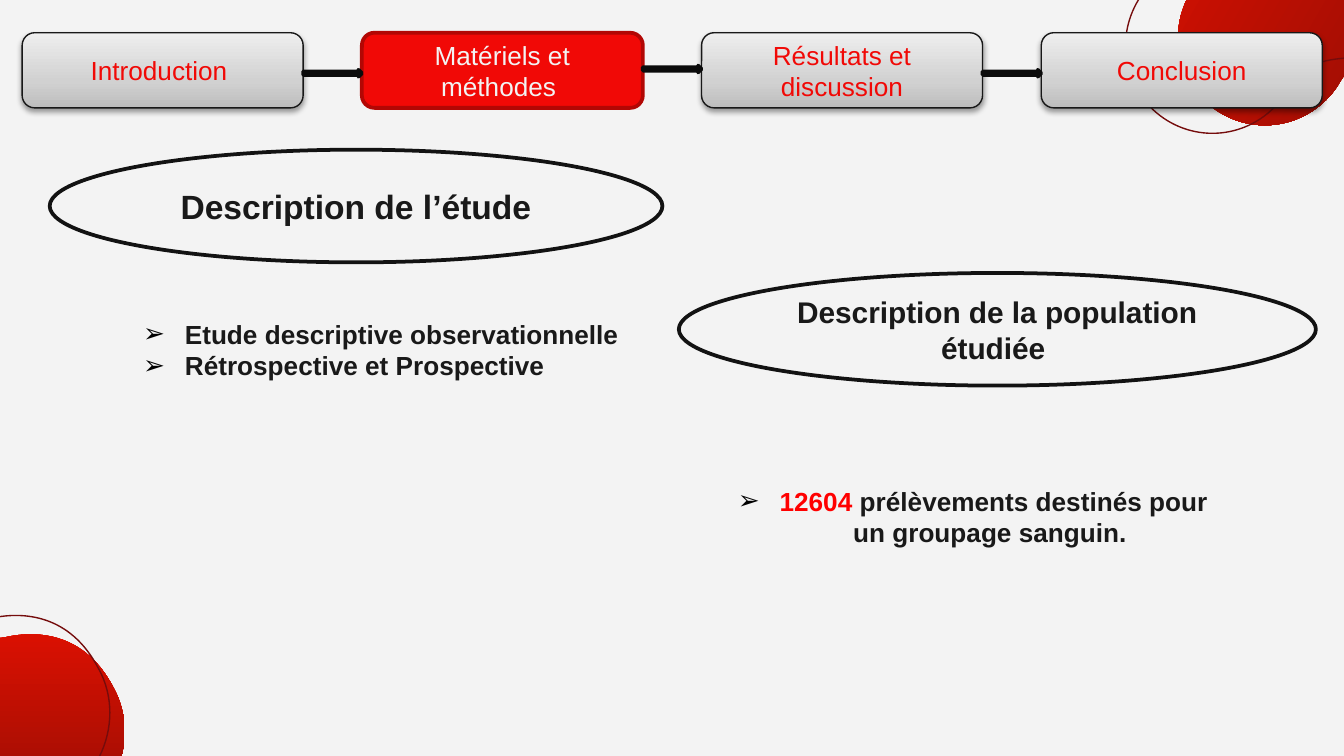
from copy import deepcopy
from math import cos, radians, sin

from lxml.etree import SubElement
from pptx import Presentation
from pptx.dml.color import RGBColor
from pptx.enum.shapes import MSO_SHAPE as Shape
from pptx.enum.text import MSO_ANCHOR as Anchor, MSO_AUTO_SIZE as AutoSize, PP_ALIGN as Align
from pptx.oxml.ns import qn
from pptx.util import Cm, Pt

FONT = "Arial"
PALE = RGBColor(0xF3, 0xF3, 0xF3)
INK = RGBColor(0x19, 0x19, 0x19)
STEP_LINE = RGBColor(0x18, 0x18, 0x18)
OUTLINE = RGBColor(0x12, 0x12, 0x12)
ARROW_LINE = RGBColor(0x0B, 0x0B, 0x0B)
RED = RGBColor(0xF1, 0x09, 0x06)
DARK_RED = RGBColor(0xB2, 0x07, 0x04)
NUMBER_RED = RGBColor(0xFF, 0x00, 0x00)
BLOB_LINE = RGBColor(0x75, 0x0C, 0x0C)
BLOB_STOPS = [(0, RGBColor(0xE9, 0x11, 0x01)), (1, RGBColor(0x63, 0x0B, 0x05))]
GREY_STOPS = [(0, RGBColor(0xBD, 0xBD, 0xBD)), (0.35, RGBColor(0xD1, 0xD1, 0xD1)),
              (1, RGBColor(0xEE, 0xEE, 0xEE))]

STEPS = ["Introduction ", "Matériels et méthodes ", "Résultats et discussion", "Conclusion"]
ACTIVE_STEP = 1
STEP_LEFT, STEP_TOP, STEP_WIDTH, STEP_HEIGHT, STEP_PITCH = 0.42, 0.62, 5.31, 1.42, 6.42

# Bézier points in inches: a start, then two controls and an end per curve.
TOP_BLOB = [
    (9.19, -0.33), (9.11, -0.31), (9.04, -0.26), (8.98, -0.21),
    (8.72, 0.02), (8.69, 0.42), (8.9, 0.68), (9.13, 0.97), (9.54, 1.01), (9.82, 0.78),
    (9.88, 0.73), (9.93, 0.67), (9.97, 0.6), (10.04, 0.48), (10.16, 0.4), (10.3, 0.38),
    (10.54, 0.34), (10.76, 0.38), (10.96, 0.48), (11.03, 0.52), (11.12, 0.54), (11.21, 0.55),
    (11.49, 0.55), (11.74, 0.33), (11.77, 0.05), (11.8, -0.27), (11.56, -0.54), (11.25, -0.56),
    (11.07, -0.57), (10.92, -0.66), (10.82, -0.8), (10.69, -1), (10.47, -1.13), (10.22, -1.14),
    (9.74, -1.16), (9.55, -0.85), (9.47, -0.61), (9.43, -0.48), (9.32, -0.38), (9.19, -0.33),
]
TOP_CENTER = (10.24, 0.16)
BOTTOM_BLOB = [
    (-0.31, 4.64), (-0.37, 4.59), (-0.44, 4.55), (-0.52, 4.53),
    (-0.83, 4.42), (-1.17, 4.59), (-1.29, 4.89), (-1.41, 5.21), (-1.25, 5.57), (-0.93, 5.69),
    (-0.86, 5.72), (-0.79, 5.73), (-0.71, 5.73), (-0.58, 5.73), (-0.46, 5.79), (-0.38, 5.9),
    (-0.23, 6.08), (-0.15, 6.28), (-0.14, 6.49), (-0.14, 6.58), (-0.12, 6.66), (-0.08, 6.73),
    (0.06, 6.97), (0.35, 7.07), (0.6, 6.95), (0.88, 6.83), (0.99, 6.5), (0.86, 6.23),
    (0.78, 6.09), (0.78, 5.92), (0.85, 5.77), (0.95, 5.57), (0.96, 5.32), (0.84, 5.11),
    (0.63, 4.71), (0.28, 4.69), (0.05, 4.74), (-0.08, 4.77), (-0.21, 4.73), (-0.31, 4.64),
]


def set_gradient(shape, stops, angle):
    shape.fill.gradient()
    shape.fill.gradient_angle = angle
    stop_list = shape._element.spPr.find(qn("a:gradFill")).find(qn("a:gsLst"))
    for _ in stops[2:]:
        stop_list.append(deepcopy(stop_list[0]))
    for stop, (position, color) in zip(shape.fill.gradient_stops, stops):
        stop.position = position
        stop.color.rgb = color


def set_line(shape, color, width):
    shape.line.color.rgb = color
    shape.line.width = Pt(width)


def add_soft_shadow(shape):
    effects = shape._element.spPr.find(qn("a:effectLst"))
    shadow = SubElement(effects, qn("a:outerShdw"), blurRad=str(Pt(3.1)), dist=str(Pt(1.6)),
                        dir="5400000", rotWithShape="0")
    color = SubElement(shadow, qn("a:srgbClr"), val="000000")
    SubElement(color, qn("a:alpha"), val="38000")


def turn(points, center, degrees):
    """Return the points turned clockwise about the center."""
    c, s = cos(radians(degrees)), sin(radians(degrees))
    offsets = [(x - center[0], y - center[1]) for x, y in points]
    return [(center[0] + c * x - s * y, center[1] + s * x + c * y) for x, y in offsets]


def make_curved(freeform):
    """Turn each three line segments into one cubic Bézier curve."""
    lines = list(freeform._element.spPr.iter(qn("a:lnTo")))
    for first, second, third in zip(lines[::3], lines[1::3], lines[2::3]):
        first.tag = qn("a:cubicBezTo")
        for line in (second, third):
            first.append(line[0])
            line.getparent().remove(line)


def add_blob(slide, points, rotation, shift=(0, 0)):
    outline = [(Cm(2.54 * (x + shift[0])), Cm(2.54 * (y + shift[1]))) for x, y in points]
    builder = slide.shapes.build_freeform(*outline[0])
    builder.add_line_segments(outline[1:])
    blob = builder.convert_to_shape()
    make_curved(blob)
    blob.rotation = rotation
    blob.shadow.inherit = False
    return blob


def add_blob_pair(slide, points, rotation, shift):
    """Add a filled blob and its shifted thin outline."""
    blob = add_blob(slide, points, rotation)
    set_gradient(blob, BLOB_STOPS, 270)
    blob.line.fill.background()
    ring = add_blob(slide, points, rotation, shift)
    ring.fill.background()
    set_line(ring, BLOB_LINE, 0.75)


def add_preset(slide, kind, left, top, width, height):
    shape = slide.shapes.add_shape(kind, Cm(left), Cm(top), Cm(width), Cm(height))
    shape.shadow.inherit = False
    return shape


def set_font(font, size, color, bold):
    font.name = FONT
    font.size = Pt(size)
    font.bold = bold
    font.color.rgb = color


def set_label(shape, text, size, color, bold=False):
    frame = shape.text_frame
    frame.word_wrap = True
    frame.vertical_anchor = Anchor.MIDDLE
    para = frame.paragraphs[0]
    para.text = text
    para.alignment = Align.CENTER
    set_font(para.font, size, color, bold)


def add_heading(slide, text, size, left, top, width):
    oval = add_preset(slide, Shape.OVAL, left, top, width, 2.13)
    oval.fill.background()
    set_line(oval, OUTLINE, 2)
    set_label(oval, text, size, INK, bold=True)


def add_bullet(para):
    props = para._p.get_or_add_pPr()
    props.set("marL", str(Cm(0.79)))
    props.set("indent", str(Cm(-0.79)))
    color = SubElement(props, qn("a:buClr"))
    SubElement(color, qn("a:srgbClr"), val="000000")
    SubElement(props, qn("a:buFont"), typeface=FONT)
    SubElement(props, qn("a:buChar"), char="➢")


def fill_list(body, left, top, height, items, alignment):
    """Place the body and write items, each a list of (text, color) spans."""
    body.left, body.top, body.width, body.height = Cm(left), Cm(top), Cm(9.53), Cm(height)
    frame = body.text_frame
    frame.auto_size = AutoSize.NONE
    frame.vertical_anchor = Anchor.MIDDLE
    for i, spans in enumerate(items):
        para = frame.add_paragraph() if i else frame.paragraphs[0]
        add_bullet(para)
        para.alignment = alignment
        para.space_before = Pt(0)
        set_font(para.font, 14, INK, True)
        for text, color in spans:
            span = para.add_run()
            span.text = text
            span.font.color.rgb = color


def add_step(slide, index, text):
    active = index == ACTIVE_STEP
    box = add_preset(slide, Shape.ROUNDED_RECTANGLE, STEP_LEFT + index * STEP_PITCH, STEP_TOP,
                     STEP_WIDTH, STEP_HEIGHT)
    if active:
        box.fill.solid()
        box.fill.fore_color.rgb = RED
        set_line(box, DARK_RED, 2)
    else:
        set_gradient(box, GREY_STOPS, 90)
        set_line(box, STEP_LINE, 0.75)
        add_soft_shadow(box)
    set_label(box, text, 14, PALE if active else RED)


def add_step_arrow(slide, index):
    left = STEP_LEFT + index * STEP_PITCH + STEP_WIDTH
    top = 1.24 if index == ACTIVE_STEP else 1.32
    arrow = add_preset(slide, Shape.RIGHT_ARROW, left, top, STEP_PITCH - STEP_WIDTH, 0.13)
    arrow.fill.solid()
    arrow.fill.fore_color.rgb = INK
    set_line(arrow, ARROW_LINE, 2)


def main():
    deck = Presentation()
    deck.slide_width, deck.slide_height = Cm(25.4), Cm(14.29)
    slide = deck.slides.add_slide(deck.slide_layouts[3])
    slide.background.fill.solid()
    slide.background.fill.fore_color.rgb = PALE
    title, study, population = slide.placeholders
    title._element.getparent().remove(title._element)

    add_blob_pair(slide, turn(TOP_BLOB, TOP_CENTER, 60), 300, (-0.39, 0.06))
    add_blob_pair(slide, BOTTOM_BLOB, 0, (-0.11, -0.14))
    add_heading(slide, "Description de l’étude", 18, 0.94, 2.83, 11.58)
    add_heading(slide, "Description de la population étudiée ", 16, 12.83, 5.16, 12.04)
    fill_list(study, 2.45, 4.65, 3.91, [[("Etude descriptive observationnelle", INK)],
                                        [("Rétrospective et Prospective", INK)]], Align.LEFT)
    fill_list(population, 13.62, 7.67, 4.19,
              [[("12604", NUMBER_RED),
                (" prélèvements destinés pour un groupage sanguin. ", INK)]], Align.CENTER)
    for index, text in enumerate(STEPS):
        add_step(slide, index, text)
    for index in range(len(STEPS) - 1):
        add_step_arrow(slide, index)
    deck.save("out.pptx")


if __name__ == "__main__":
    main()
